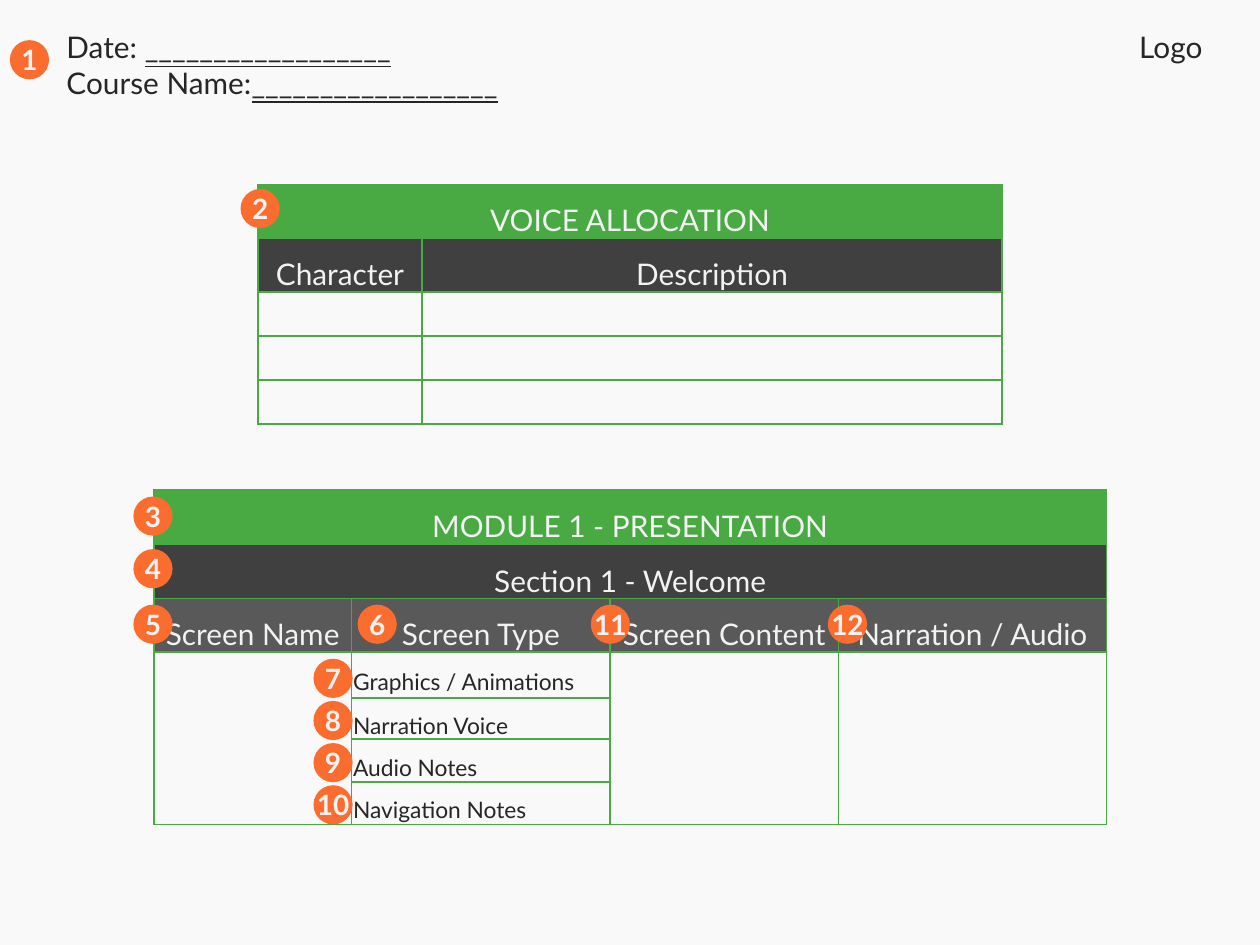
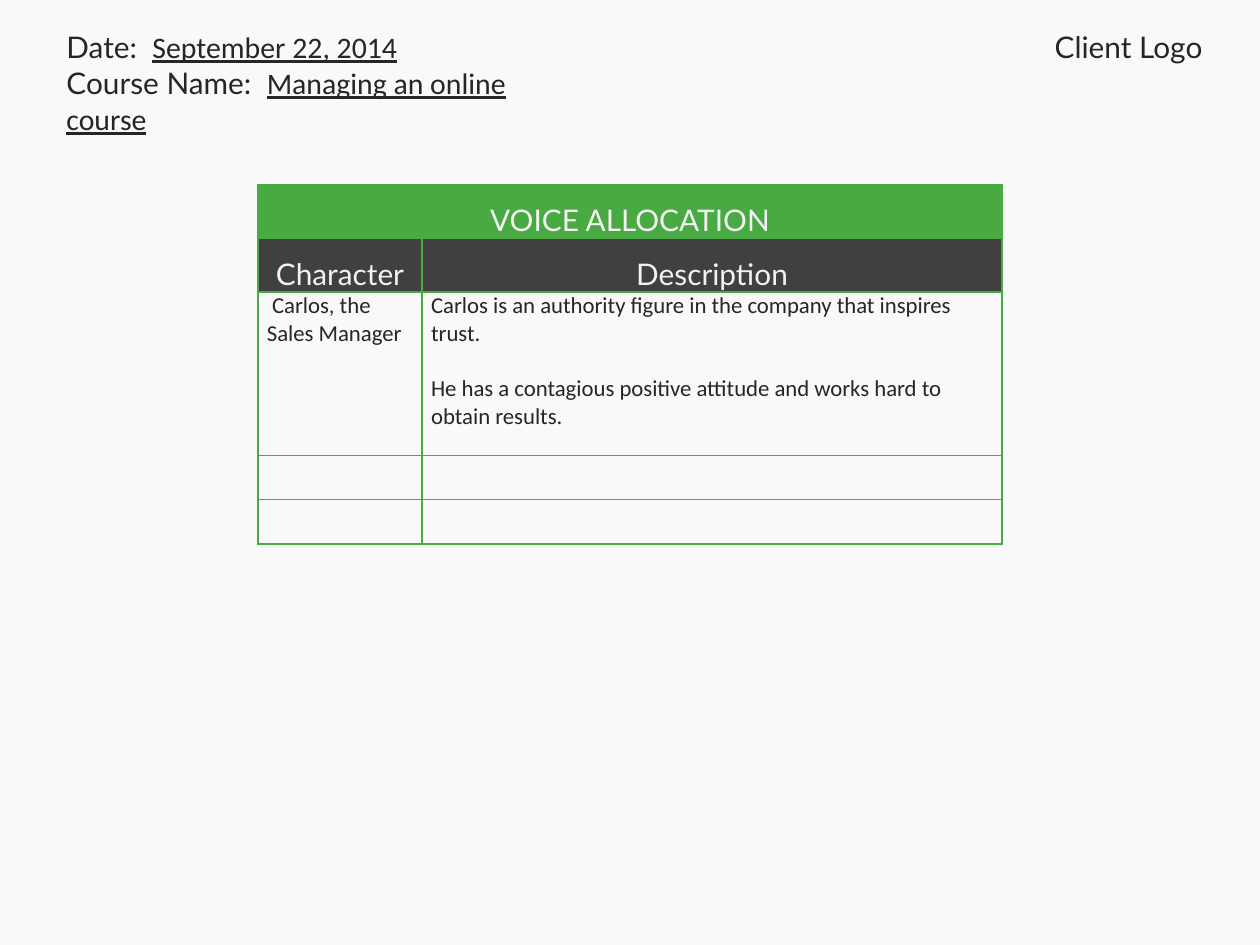
from pptx import Presentation
from pptx.dml.color import RGBColor
from pptx.enum.shapes import MSO_SHAPE
from pptx.enum.text import MSO_ANCHOR, PP_ALIGN
from pptx.util import Cm, Pt
from lxml.etree import SubElement
from pptx.oxml.ns import qn

PAPER, GREEN, ORANGE = "F9F9F9", "49AA43", "FA6D2E"
DARK, GREY, INK, PALE = "404040", "595959", "262626", "F2F2F2"
LEFT, MID, RIGHT = PP_ALIGN.LEFT, PP_ALIGN.CENTER, PP_ALIGN.RIGHT
VOICE = (5.2, 3.72)
MODULE = (3.1, 9.88)
HEAD = 1.08
DISC = 0.79
BLANK = "_" * 18


def tint(code):
    return RGBColor.from_string(code)


def paint(fill, code):
    fill.solid()
    fill.fore_color.rgb = tint(code)


def write(par, text, size=17, color=INK, font="Lato", bold=False,
          under=False, align=LEFT, lines=None, before=0):
    """Add one run to a paragraph and format both."""
    par.alignment = align
    par.space_before = Pt(before)
    if lines:
        par.line_spacing = lines
    run = par.add_run()
    run.text = text
    run.font.size = Pt(size)
    run.font.color.rgb = tint(color)
    run.font.name = font
    run.font.bold = bold
    run.font.underline = under


# Tables
def edge(cell):
    props = cell._tc.get_or_add_tcPr()
    for spot, side in enumerate(("lnL", "lnR", "lnT", "lnB")):
        line = props.makeelement(qn("a:" + side), {"w": str(Pt(1))})
        fill = SubElement(line, qn("a:solidFill"))
        SubElement(fill, qn("a:srgbClr"), val=GREEN)
        props.insert(spot, line)


def grid(slide, spot, cols, rows, pad):
    """Add a plain table with green rules at a spot."""
    frame = slide.shapes.add_table(
        len(rows), len(cols), Cm(spot[0]), Cm(spot[1]),
        Cm(sum(cols)), Cm(sum(rows)))
    table = frame.table
    table.first_row = table.horz_banding = False
    for col, width in zip(table.columns, cols):
        col.width = Cm(width)
    for row, height in zip(table.rows, rows):
        row.height = Cm(height)
    for cell in table.iter_cells():
        cell.margin_left = cell.margin_right = Cm(pad)
        cell.margin_top = cell.margin_bottom = 0
        paint(cell.fill, PAPER)
        edge(cell)
    return table


def label(cell, text, fill=PAPER, **style):
    paint(cell.fill, fill)
    cell.vertical_anchor = MSO_ANCHOR.MIDDLE
    write(cell.text_frame.paragraphs[0], text, lines=1.5, **style)


def heads(table, row, texts, fill):
    """Fill a heading row; a lone text spans the whole width."""
    if len(texts) == 1:
        table.cell(row, 0).merge(table.cell(row, len(table.columns) - 1))
    for col, text in enumerate(texts):
        label(table.cell(row, col), text, fill, color=PALE, align=MID)


def voices(slide, spot, cast=(), tall=0.89):
    """Voice table; cast holds the paragraphs of each cell in row one."""
    table = grid(slide, spot, (3.31, 11.69), (HEAD, HEAD, tall, 0.89, 0.89), 0.18)
    heads(table, 0, ["VOICE ALLOCATION"], GREEN)
    heads(table, 1, ["Character", "Description"], DARK)
    for col, texts in enumerate(cast):
        frame = table.cell(2, col).text_frame
        for num, text in enumerate(texts):
            par = frame.add_paragraph() if num else frame.paragraphs[0]
            write(par, text, size=13, font="Calibri", before=16 if num else 0)


def module(slide, spot):
    table = grid(slide, spot, (3.99, 5.21, 4.6, 5.41),
                 (HEAD + 0.02, HEAD, HEAD, 0.93, 0.83, 0.86, 0.86), 0.03)
    heads(table, 0, ["MODULE 1 - PRESENTATION"], GREEN)
    heads(table, 1, ["Section 1 - Welcome"], DARK)
    heads(table, 2, ["Screen Name", "Screen Type", "Screen Content",
                     "Narration / Audio"], GREY)
    for col in (0, 2, 3):
        table.cell(3, col).merge(table.cell(6, col))
    kinds = ("Graphics / Animations", "Narration Voice", "Audio Notes",
             "Navigation Notes")
    for row, kind in enumerate(kinds, 3):
        label(table.cell(row, 1), kind, size=13)


# Page header
def note(slide, left, rows, align=LEFT):
    """Text box whose rows are (plain, underlined, font) parts."""
    box = slide.shapes.add_textbox(Cm(left), Cm(0.46), Cm(11), Cm(0.85 * len(rows)))
    frame = box.text_frame
    frame.word_wrap = True
    for num, (plain, lined, font) in enumerate(rows):
        par = frame.add_paragraph() if num else frame.paragraphs[0]
        write(par, plain, align=align)
        if lined:
            write(par, lined, font=font, under=True, align=align)


def header(slide, date, course, logo, font="Lato"):
    note(slide, 1.09, [("Date: " + date[0], date[1], font),
                       ("Course Name:" + course[0], course[1], font)])
    note(slide, 13.49, [(logo, "", font)], RIGHT)


# Numbered discs
def badge(slide, num, spot, left, top):
    disc = slide.shapes.add_shape(
        MSO_SHAPE.OVAL, Cm(spot[0] + left), Cm(spot[1] + top), Cm(DISC), Cm(DISC))
    disc.shadow.inherit = False
    paint(disc.fill, ORANGE)
    disc.line.fill.background()
    frame = disc.text_frame
    frame.word_wrap = False
    frame.margin_left = frame.margin_right = 0
    frame.margin_top = frame.margin_bottom = 0
    frame.vertical_anchor = MSO_ANCHOR.MIDDLE
    write(frame.paragraphs[0], str(num), size=16, color=PALE, bold=True, align=MID)


def badges(slide):
    badge(slide, 1, (0, 0), 0.2, 0.81)
    badge(slide, 2, VOICE, -0.35, 0.09)
    badge(slide, 3, MODULE, -0.41, 0.13)
    badge(slide, 4, MODULE, -0.41, 1.19)
    # Column headings
    for num, left in ((5, -0.41), (6, 4.11), (11, 8.81), (12, 13.59)):
        badge(slide, num, MODULE, left, 2.31)
    # Screen type rows
    for step in range(4):
        badge(slide, 7 + step, MODULE, 3.22, 3.4 + 0.85 * step)


def page(deck):
    slide = deck.slides.add_slide(deck.slide_layouts[6])
    paint(slide.background.fill, PAPER)
    return slide


def blank(deck):
    slide = page(deck)
    voices(slide, VOICE)
    module(slide, MODULE)
    header(slide, ("", BLANK), ("", BLANK), "Logo")
    badges(slide)


def sample(deck):
    slide = page(deck)
    cast = (
        [" Carlos, the Sales Manager"],
        ["Carlos is an authority figure in the company that inspires trust.",
         "He has a contagious positive attitude and works hard to obtain results."],
    )
    voices(slide, VOICE, cast, 3.3)
    header(slide, (" ", "September 22, 2014"),
           ("  ", "Managing an online course"), "Client Logo", "Calibri")


def main():
    deck = Presentation()
    deck.slide_width, deck.slide_height = Cm(25.4), Cm(19.05)
    blank(deck)
    sample(deck)
    deck.save("out.pptx")


if __name__ == "__main__":
    main()
